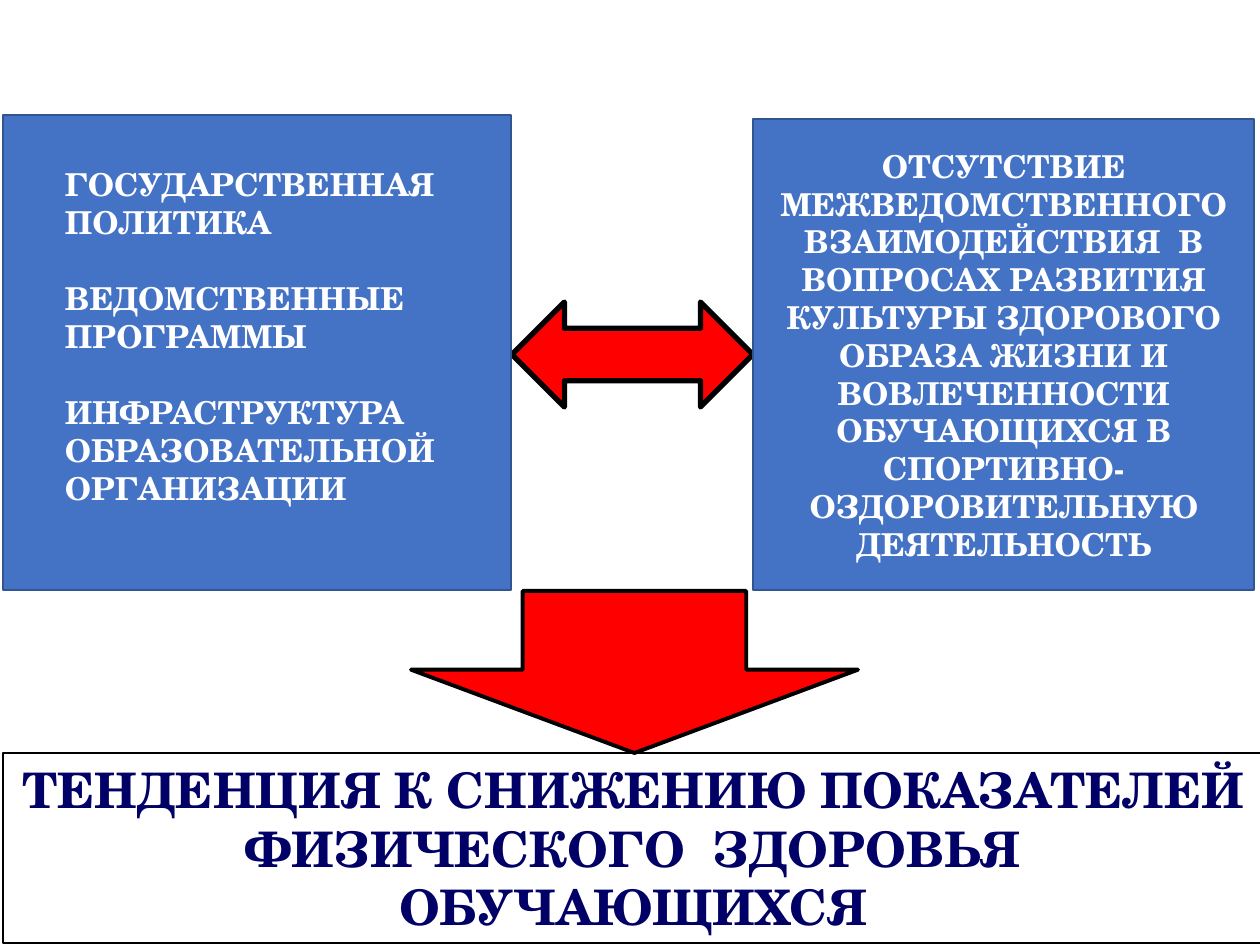
"""Build a slide on how policy and weak cooperation lead to declining student health."""
from dataclasses import dataclass
from typing import Optional

from pptx import Presentation
from pptx import util as u
from pptx.dml.color import RGBColor
from pptx.enum import shapes, text

EMU_PER_PX = 914400 / 126
FONT = "TeX Gyre Schola"
COLORS = {
    "panel": "4472C4",
    "panel_edge": "325491",
    "arrow": "FF0000",
    "black": "000000",
    "white": "FFFFFF",
    "navy": "000066",
}


@dataclass(frozen=True)
class Block:
    kind: shapes.MSO_SHAPE
    left: int
    top: int
    width: int
    height: int
    fill: Optional[str]
    edge: str
    edge_pt: float
    adjustments: tuple[float, ...] = ()


@dataclass(frozen=True)
class Wording:
    paragraphs: tuple[str, ...]
    size: int
    color: str
    align: text.PP_ALIGN = text.PP_ALIGN.CENTER
    anchor: text.MSO_ANCHOR = text.MSO_ANCHOR.MIDDLE
    inset_left: int = 13
    inset_bottom: int = 6
    gap_pt: int = 0


def px(length: int) -> u.Emu:
    return u.Emu(round(length * EMU_PER_PX))


def rgb(name: str) -> RGBColor:
    return RGBColor.from_string(COLORS[name])


def draw_block(slide, block: Block, wording: Optional[Wording] = None) -> None:
    shape = slide.shapes.add_shape(
        block.kind, *map(px, (block.left, block.top, block.width, block.height))
    )
    shape.shadow.inherit = False
    for index, value in enumerate(block.adjustments):
        shape.adjustments[index] = value
    if block.fill:
        shape.fill.solid()
        shape.fill.fore_color.rgb = rgb(block.fill)
    else:
        shape.fill.background()
    shape.line.color.rgb = rgb(block.edge)
    shape.line.width = u.Pt(block.edge_pt)
    if wording:
        write(shape.text_frame, wording)


def write(frame, wording: Wording) -> None:
    frame.word_wrap = True
    frame.vertical_anchor = wording.anchor
    frame.margin_left = px(wording.inset_left)
    frame.margin_bottom = px(wording.inset_bottom)
    frame.text = "\n".join(wording.paragraphs)
    for index, paragraph in enumerate(frame.paragraphs):
        paragraph.alignment = wording.align
        if index:
            paragraph.space_before = u.Pt(wording.gap_pt)
        for run in paragraph.runs:
            run.font.name = FONT
            run.font.size = u.Pt(wording.size)
            run.font.bold = True
            run.font.color.rgb = rgb(wording.color)


KIND = shapes.MSO_SHAPE
INTERACTION = Block(KIND.LEFT_RIGHT_ARROW, 512, 302, 241, 105, "arrow", "black", 3)
CONSEQUENCE = Block(
    KIND.DOWN_ARROW, 411, 591, 447, 162, "arrow", "black", 2.25, (0.5, 0.514)
)
CONCLUSION = Block(KIND.RECTANGLE, 3, 753, 1260, 190, None, "black", 0.75)
BARRIERS = Block(KIND.RECTANGLE, 753, 119, 501, 471, "panel", "panel_edge", 1)
RESOURCES = Block(KIND.RECTANGLE, 3, 115, 508, 475, "panel", "panel_edge", 1)

CONCLUSION_WORDING = Wording(
    ("ТЕНДЕНЦИЯ К СНИЖЕНИЮ ПОКАЗАТЕЛЕЙ ФИЗИЧЕСКОГО  ЗДОРОВЬЯ ОБУЧАЮЩИХСЯ",),
    28,
    "navy",
    anchor=text.MSO_ANCHOR.TOP,
)
BARRIERS_WORDING = Wording(
    (
        "ОТСУТСТВИЕ МЕЖВЕДОМСТВЕННОГО ВЗАИМОДЕЙСТВИЯ  В ВОПРОСАХ РАЗВИТИЯ "
        "КУЛЬТУРЫ ЗДОРОВОГО ОБРАЗА ЖИЗНИ И ВОВЛЕЧЕННОСТИ ОБУЧАЮЩИХСЯ В "
        "СПОРТИВНО-ОЗДОРОВИТЕЛЬНУЮ ДЕЯТЕЛЬНОСТЬ",
    ),
    18,
    "white",
)
RESOURCES_WORDING = Wording(
    (
        "ГОСУДАРСТВЕННАЯ ПОЛИТИКА",
        "ВЕДОМСТВЕННЫЕ ПРОГРАММЫ",
        "ИНФРАСТРУКТУРА ОБРАЗОВАТЕЛЬНОЙ ОРГАНИЗАЦИИ",
    ),
    18,
    "white",
    align=text.PP_ALIGN.LEFT,
    inset_left=62,
    inset_bottom=39,
    gap_pt=22,
)


def main() -> None:
    deck = Presentation()
    deck.slide_width, deck.slide_height = px(1260), px(945)
    slide = deck.slides.add_slide(deck.slide_layouts[6])
    draw_block(slide, INTERACTION)
    draw_block(slide, CONSEQUENCE)
    draw_block(slide, CONCLUSION, CONCLUSION_WORDING)
    draw_block(slide, BARRIERS, BARRIERS_WORDING)
    draw_block(slide, RESOURCES, RESOURCES_WORDING)
    deck.save("out.pptx")


if __name__ == "__main__":
    main()
